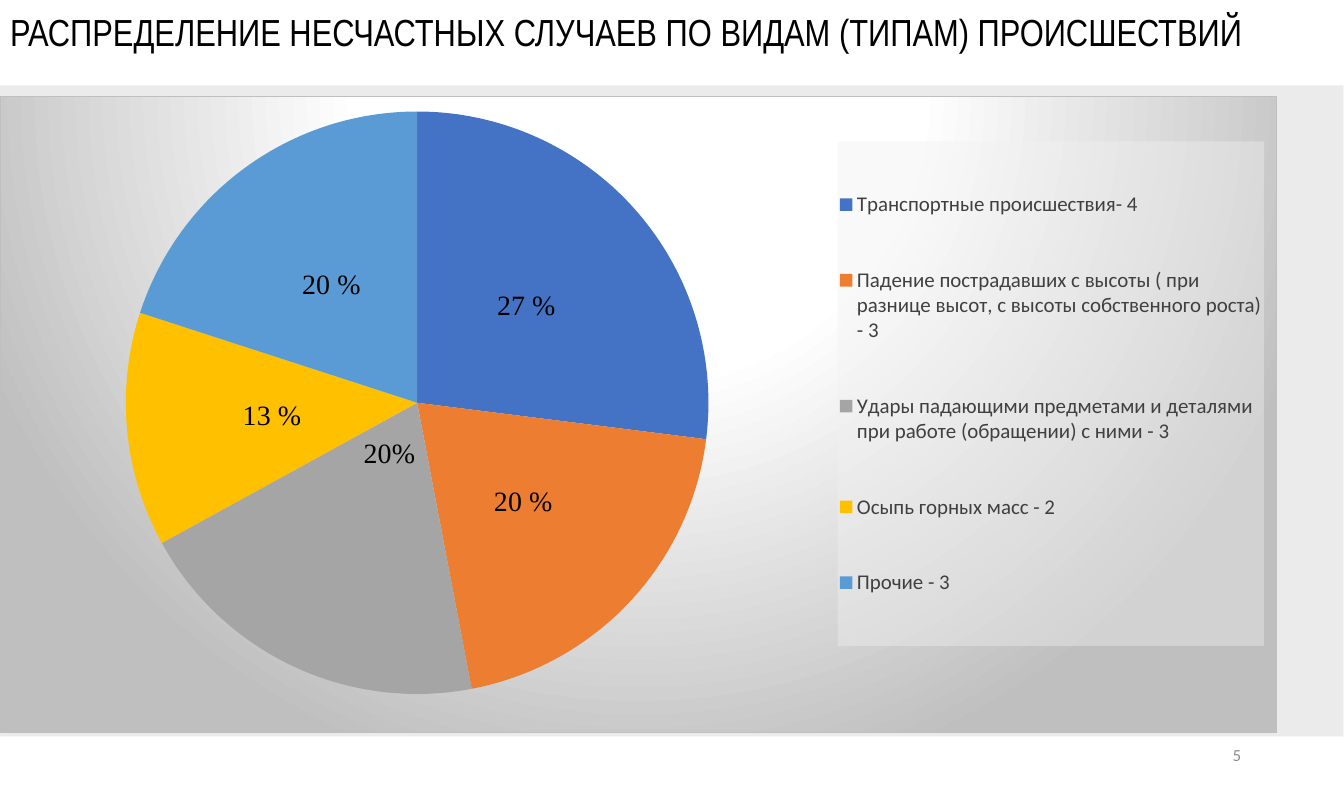
from lxml.etree import fromstring
from pptx import Presentation
from pptx.chart.data import CategoryChartData
from pptx.dml.color import RGBColor
from pptx.enum.chart import XL_CHART_TYPE, XL_LABEL_POSITION, XL_LEGEND_POSITION
from pptx.enum.shapes import MSO_SHAPE
from pptx.enum.text import MSO_ANCHOR, PP_ALIGN
from pptx.oxml.ns import nsdecls, qn
from pptx.util import Inches, Pt

BLACK = RGBColor(0x00, 0x00, 0x00)
DARK = RGBColor(0x40, 0x40, 0x40)
GREY = RGBColor(0x8C, 0x8C, 0x8C)
PALE = RGBColor(0xEB, 0xEB, 0xEB)
BLUE = RGBColor(0x44, 0x72, 0xC4)
ORANGE = RGBColor(0xED, 0x7D, 0x31)
STEEL = RGBColor(0xA5, 0xA5, 0xA5)
GOLD = RGBColor(0xFF, 0xC0, 0x00)
SKY = RGBColor(0x5B, 0x9B, 0xD5)

TITLE = "РАСПРЕДЕЛЕНИЕ НЕСЧАСТНЫХ СЛУЧАЕВ ПО ВИДАМ (ТИПАМ) ПРОИСШЕСТВИЙ"
NUMBER = "5"
SLICES = [
    ("Транспортные происшествия- 4", 27, "27 %", BLUE),
    ("Падение пострадавших с высоты ( при разнице высот, "
     "с высоты собственного роста) - 3", 20, "20 %", ORANGE),
    ("Удары падающими предметами и деталями при работе "
     "(обращении) с ними - 3", 20, "20%", STEEL),
    ("Осыпь горных масс - 2", 13, "13 %", GOLD),
    ("Прочие - 3", 20, "20 %", SKY),
]
MOVED = 2

PANEL = f"""<c:spPr {nsdecls('c', 'a')}>
<a:gradFill><a:gsLst>
<a:gs pos="0"><a:srgbClr val="FFFFFF"/></a:gs>
<a:gs pos="39000"><a:srgbClr val="FFFFFF"/></a:gs>
<a:gs pos="100000"><a:srgbClr val="BFBFBF"/></a:gs>
</a:gsLst><a:path path="circle">
<a:fillToRect l="50000" t="-80000" r="50000" b="180000"/>
</a:path></a:gradFill>
<a:ln w="9525"><a:solidFill><a:srgbClr val="BFBFBF"/></a:solidFill></a:ln>
</c:spPr>"""
VEIL = f"""<c:spPr {nsdecls('c', 'a')}>
<a:solidFill><a:srgbClr val="F2F2F2"><a:alpha val="39000"/></a:srgbClr></a:solidFill>
<a:ln><a:noFill/></a:ln></c:spPr>"""


def style(font, name, size, color):
    font.name, font.size = name, Pt(size)
    font.color.rgb = color


def layout(owner, spot, **parts):
    for old in owner.findall(qn("c:layout")):
        owner.remove(old)
    tags = "".join(f'<c:{tag} val="{val}"/>' for tag, val in parts.items())
    owner.insert(spot, fromstring(
        f"<c:layout {nsdecls('c')}><c:manualLayout>{tags}</c:manualLayout></c:layout>"))


def write(shape, text, name, size, color, align, anchor):
    frame = shape.text_frame
    frame.word_wrap = True
    frame.vertical_anchor = anchor
    para = frame.paragraphs[0]
    para.text, para.alignment = text, align
    style(para.font, name, size, color)


prs = Presentation()
prs.slide_width, prs.slide_height = Inches(13.3854), Inches(7.8733)
slide = prs.slides.add_slide(prs.slide_layouts[5])
shapes = slide.shapes

title = shapes.title
title.left, title.top = Inches(0), Inches(0.04)
title.width, title.height = Inches(13.72), Inches(0.56)
write(title, TITLE, "Arial Narrow", 27, BLACK, PP_ALIGN.LEFT, MSO_ANCHOR.TOP)

band = shapes.add_shape(MSO_SHAPE.RECTANGLE, 0, Inches(0.85), Inches(13.38), Inches(6.48))
band.shadow.inherit = False
band.fill.solid()
band.fill.fore_color.rgb = PALE
band.line.fill.background()

page = shapes.add_textbox(Inches(9.45), Inches(7.3), Inches(3.01), Inches(0.42))
write(page, NUMBER, "Calibri", 12.1, GREY, PP_ALIGN.RIGHT, MSO_ANCHOR.MIDDLE)

data = CategoryChartData(number_format="0")
data.categories = [row[0] for row in SLICES]
data.add_series("Series 1", [row[1] for row in SLICES])
chart = shapes.add_chart(XL_CHART_TYPE.PIE, 0, Inches(0.96), Inches(12.72),
                         Inches(6.34), data).chart
chart.has_title = False
style(chart.font, "Calibri", 10, BLACK)
space = chart.element
space.find(qn("c:chart")).addnext(fromstring(PANEL))
layout(space.find(".//" + qn("c:plotArea")), 0, layoutTarget="inner",
       xMode="edge", yMode="edge", x=0.098, y=0.023, w=0.457, h=0.916)

chart.has_legend = True
legend = chart.legend
legend.position = XL_LEGEND_POSITION.RIGHT
legend.include_in_layout = False
style(legend.font, "Calibri", 15, DARK)
box = space.find(".//" + qn("c:legend"))
box.find(qn("c:overlay")).addnext(fromstring(VEIL))
layout(box, len(box.findall(qn("c:legendPos"))),
       xMode="edge", yMode="edge", x=0.656, y=0.07, w=0.334, h=0.793)

plot = chart.plots[0]
plot.vary_by_categories = True
series = plot.series[0]
for i, (_, _, text, color) in enumerate(SLICES):
    point = series.points[i]
    point.format.fill.solid()
    point.format.fill.fore_color.rgb = color
    point.format.line.fill.background()
    label = point.data_label
    run = label.text_frame.paragraphs[0].add_run()
    run.text = text
    style(run.font, "Times New Roman", 20, BLACK)
    label.position = XL_LABEL_POSITION.CENTER

layout(space.findall(".//" + qn("c:dLbl"))[MOVED], 1, x=0.027, y=-0.127)

prs.save("out.pptx")
